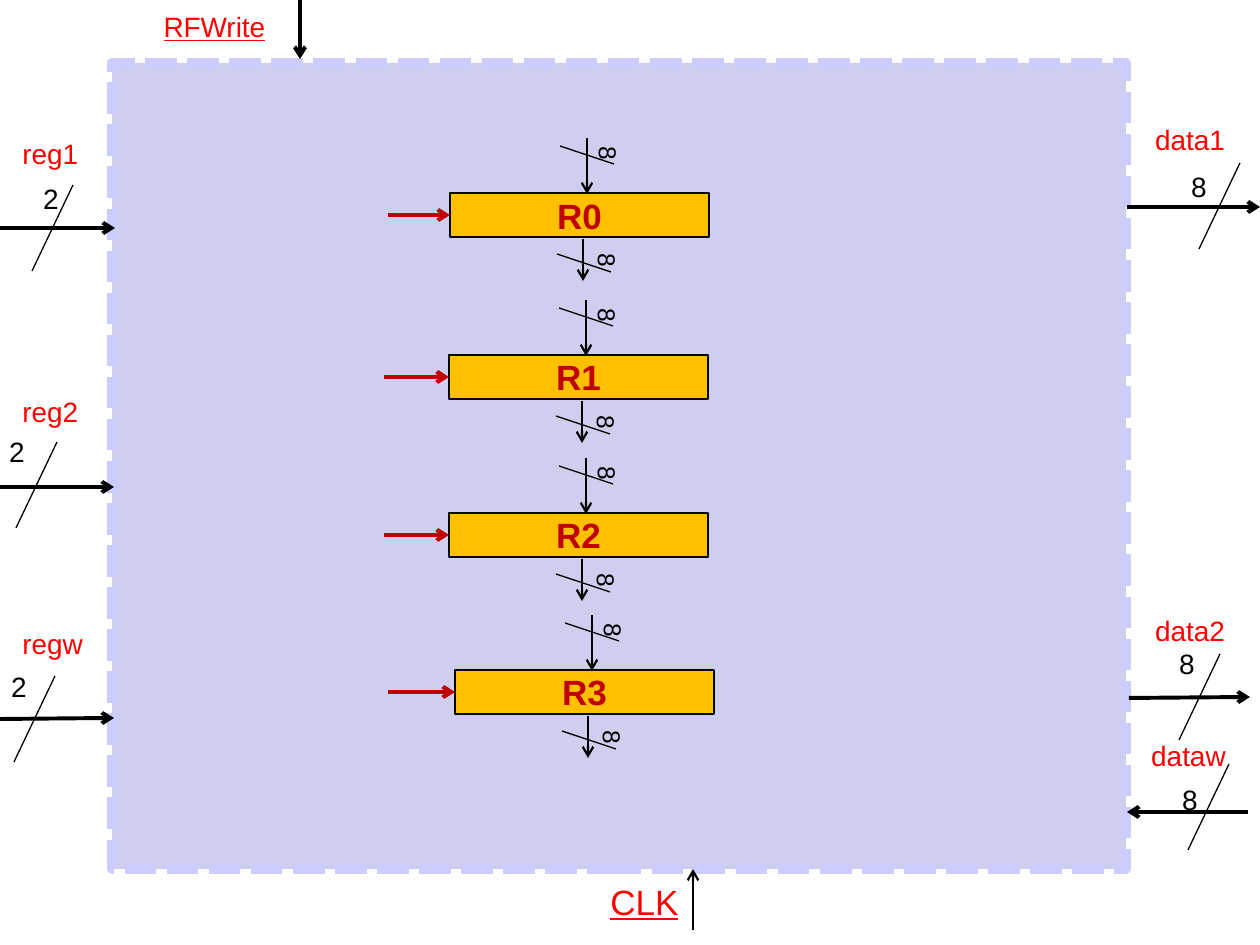
"""Build a slide showing a register file with four registers and its buses."""
from lxml.etree import SubElement
from pptx import Presentation
from pptx.dml.color import RGBColor
from pptx.enum.dml import MSO_LINE
from pptx.enum.shapes import MSO_CONNECTOR, MSO_SHAPE
from pptx.enum.text import MSO_ANCHOR, MSO_AUTO_SIZE, PP_ALIGN
from pptx.oxml.ns import qn
from pptx.util import Pt

SCALE = 914400 / 126
FONT = "Arial"
COLORS = {
    "black": "000000",
    "label": "FF0000",
    "register_text": "C00000",
    "register": "FFC000",
    "frame": "CECEEF",
    "frame_line": "CCCCFF",
}
FRAME = (112, 63, 1014, 806)
REGISTER_SIZE = (259, 44)
NUMBER_SIZE = (122, 47)
BIT_SIZE = (82, 31)
BUS_SLASH = (-41, 86)
BIT_SLASH = (-54, -18)

# name, name box, alignment, bus start, bus end, slash start, width in bits, number corner
BUSES = [
    ("reg1", (10, 130, 82, 47), PP_ALIGN.LEFT, (0, 228), (115, 228), (73, 185), "2", (-10, 175)),
    ("reg2", (10, 388, 82, 47), PP_ALIGN.LEFT, (0, 487), (114, 487), (57, 442), "2", (-44, 428)),
    ("regw", (10, 620, 87, 47), PP_ALIGN.LEFT, (0, 719), (114, 718), (55, 676), "2", (-42, 663)),
    ("data1", (1142, 116, 96, 47), PP_ALIGN.CENTER, (1127, 207), (1260, 207), (1240, 163), "8", (1138, 163)),
    ("data2", (1142, 607, 96, 47), PP_ALIGN.CENTER, (1129, 698), (1250, 697), (1220, 654), "8", (1126, 640)),
    ("dataw", (1138, 732, 101, 47), PP_ALIGN.CENTER, (1248, 812), (1127, 812), (1229, 764), "8", (1129, 776)),
]
CONTROLS = [
    ("RFWrite", (150, 3, 129, 47), 16, (300, 0), (300, 59), 2.25),
    ("CLK", (597, 874, 95, 55), 20, (693, 930), (693, 869), 1.25),
]
REGISTERS = [
    ("R0", 450, 193, 388),
    ("R1", 449, 355, 384),
    ("R2", 449, 513, 384),
    ("R3", 455, 670, 388),
]
# arrow start, arrow end, slash start, number centre, all from the register's corner
PORTS = [
    ((133, 46), (133, 88), (161, 79), (163, 67)),
    ((137, -55), (137, 1), (164, -29), (164, -40)),
]


def px(*lengths):
    return [round(length * SCALE) for length in lengths]


def color(name):
    return RGBColor.from_string(COLORS[name])


def shift(point, offset):
    return point[0] + offset[0], point[1] + offset[1]


def add_line(shapes, start, end, width, arrow=False, line_color="black"):
    line = shapes.add_connector(MSO_CONNECTOR.STRAIGHT, *px(*start, *end))
    line.line.color.rgb = color(line_color)
    line.line.width = Pt(width)
    if arrow:
        SubElement(line.line._get_or_add_ln(), qn("a:tailEnd"), type="arrow")
    SubElement(line._element.spPr, qn("a:effectLst"))
    return line


def style_text(shape, text, size, font_color, align=PP_ALIGN.CENTER):
    para = shape.text_frame.paragraphs[0]
    para.text = text
    para.alignment = align
    para.font.name = FONT
    para.font.size = Pt(size)
    para.font.color.rgb = color(font_color)
    return para


def add_label(shapes, text, area, size, font_color, align=PP_ALIGN.CENTER):
    box = shapes.add_textbox(*px(*area))
    box.text_frame.word_wrap = False
    box.text_frame.auto_size = MSO_AUTO_SIZE.SHAPE_TO_FIT_TEXT
    return style_text(box, text, size, font_color, align)


def add_rectangle(shapes, area, fill, line_color, width):
    box = shapes.add_shape(MSO_SHAPE.RECTANGLE, *px(*area))
    box.shadow.inherit = False
    box.fill.solid()
    box.fill.fore_color.rgb = color(fill)
    box.line.color.rgb = color(line_color)
    box.line.width = Pt(width)
    return box


def add_register(shapes, name, left, top, enable_left):
    corner = (left, top)
    box = add_rectangle(shapes, (*corner, *REGISTER_SIZE), "register", "black", 1.5)
    box.text_frame.word_wrap = False
    box.text_frame.vertical_anchor = MSO_ANCHOR.MIDDLE
    style_text(box, name, 20, "register_text").font.bold = True

    for start, end, slash, center in PORTS:
        add_line(shapes, shift(corner, start), shift(corner, end), 1.25, arrow=True)
        slash_start = shift(corner, slash)
        add_line(shapes, slash_start, shift(slash_start, BIT_SLASH), 0.75)
        width, height = BIT_SIZE
        number_corner = shift(shift(corner, center), (-width / 2, -height / 2))
        number = shapes.add_textbox(*px(*number_corner, *BIT_SIZE))
        number.rotation = 90
        number.text_frame.word_wrap = True
        style_text(number, "8", 14, "black")

    middle = top + REGISTER_SIZE[1] / 2
    enable = add_line(shapes, (enable_left, middle), (left, middle), 2.25, True, "register_text")
    enable.end_connect(box, 1)


def main():
    deck = Presentation()
    deck.slide_width, deck.slide_height = px(1260, 945)
    shapes = deck.slides.add_slide(deck.slide_layouts[6]).shapes

    frame = add_rectangle(shapes, FRAME, "frame", "frame_line", 6)
    frame.line.dash_style = MSO_LINE.SQUARE_DOT

    for name, area, align, start, end, slash, bits, corner in BUSES:
        add_line(shapes, start, end, 2.25, arrow=True)
        add_line(shapes, slash, shift(slash, BUS_SLASH), 0.75)
        add_label(shapes, name, area, 16, "label", align)
        add_label(shapes, bits, (*corner, *NUMBER_SIZE), 16, "black")

    for name, area, size, start, end, width in CONTROLS:
        add_label(shapes, name, area, size, "label").font.underline = True
        add_line(shapes, start, end, width, arrow=True)

    for register in REGISTERS:
        add_register(shapes, *register)

    deck.save("out.pptx")


if __name__ == "__main__":
    main()
